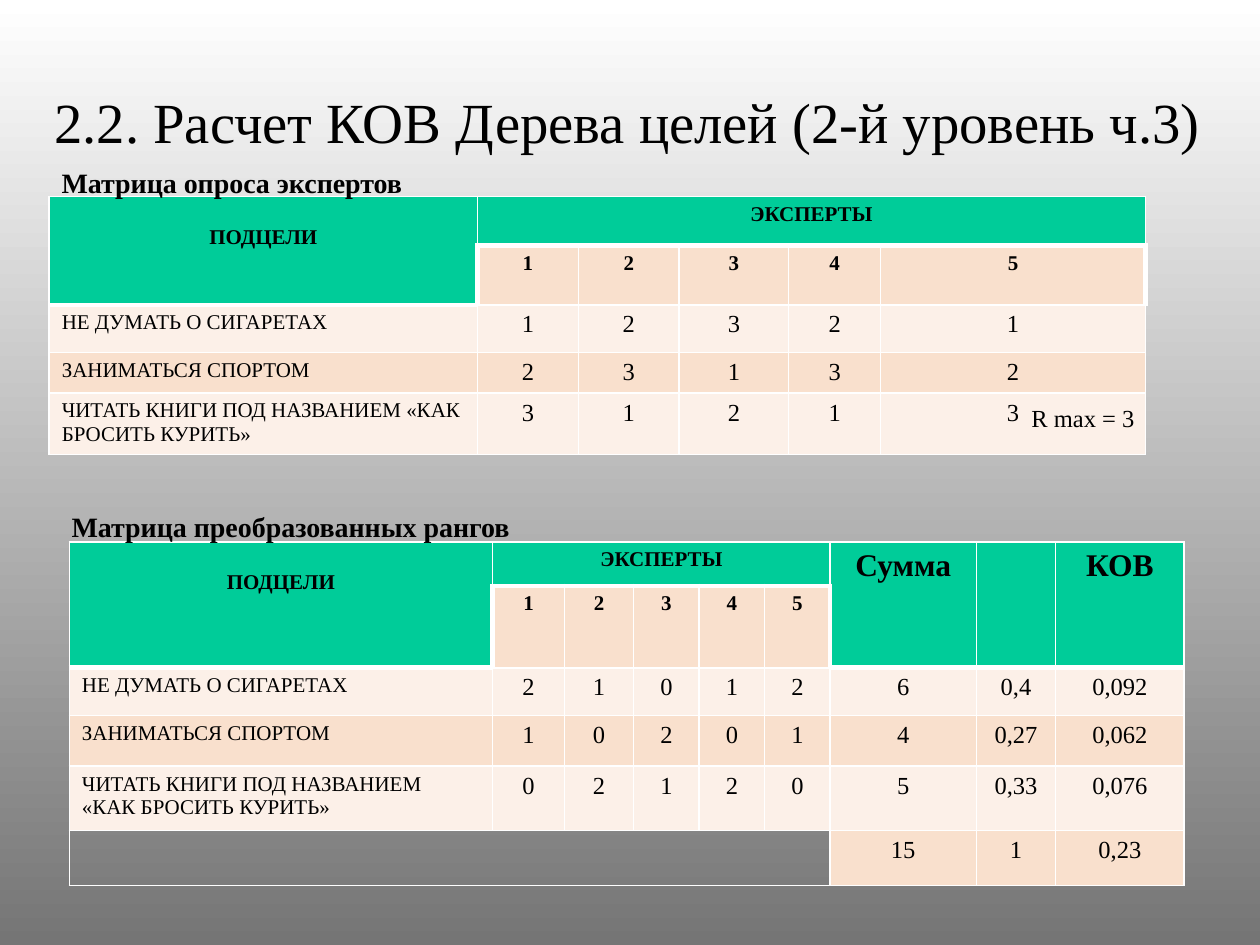
from dataclasses import dataclass

from lxml.etree import SubElement
from pptx import Presentation
from pptx.dml.color import RGBColor
from pptx.enum.text import MSO_ANCHOR as Anchor, PP_ALIGN as Align
from pptx.oxml.ns import qn
from pptx.util import Inches, Pt


@dataclass(frozen=True)
class Theme:
    font: str = "Times New Roman"
    ink: str = "000000"
    line: str = "FFFFFF"
    header: str = "00CC99"
    band_dark: str = "F9E0CD"
    band_light: str = "FCF0E8"
    background_top: str = "FFFFFF"
    background_bottom: str = "757575"
    title: float = 32.4
    caption: float = 16
    label: float = 12
    value: float = 14
    total: float = 18
    thin: float = 1
    thick: float = 3


THEME = Theme()
EXPERTS = 5
GOALS = [
    "НЕ ДУМАТЬ О СИГАРЕТАХ",
    "ЗАНИМАТЬСЯ СПОРТОМ",
    "ЧИТАТЬ КНИГИ ПОД НАЗВАНИЕМ «КАК БРОСИТЬ КУРИТЬ»",
]
SURVEY = ["1 2 3 2 1", "2 3 1 3 2", "3 1 2 1 3"]
RANKS = ["2 1 0 1 2 6 0,4 0,092", "1 0 2 0 1 4 0,27 0,062", "0 2 1 2 0 5 0,33 0,076"]
TOTALS = ["15", "1", "0,23"]


def write(text_frame, text, size, bold=False, align=Align.LEFT):
    text_frame.text = text
    paragraph = text_frame.paragraphs[0]
    paragraph.alignment = align
    for run in paragraph.runs:
        run.font.name = THEME.font
        run.font.size = Pt(size)
        run.font.bold = bold
        run.font.color.rgb = RGBColor.from_string(THEME.ink)


def add_background(slide):
    fill = slide.background.fill
    fill.gradient()
    fill.gradient_angle = 270
    colors = (THEME.background_top, THEME.background_bottom)
    for stop, position, color in zip(fill.gradient_stops, (0, 1), colors):
        stop.position = position
        stop.color.rgb = RGBColor.from_string(color)


def add_title(slide, box, text):
    title = slide.shapes.title
    title.left, title.top, title.width, title.height = map(Inches, box)
    title.text_frame.vertical_anchor = Anchor.MIDDLE
    write(title.text_frame, text, THEME.title)


def add_text(slide, box, text, size, bold=False, align=Align.LEFT):
    text_frame = slide.shapes.add_textbox(*map(Inches, box)).text_frame
    text_frame.word_wrap = True
    text_frame.vertical_anchor = Anchor.MIDDLE
    write(text_frame, text, size, bold, align)


def set_borders(cell, thick_sides):
    properties = cell._tc.get_or_add_tcPr()
    for side in "LRTB":
        width = THEME.thick if side in thick_sides else THEME.thin
        line = SubElement(properties, qn(f"a:ln{side}"), w=str(Pt(width)))
        fill = SubElement(line, qn("a:solidFill"))
        SubElement(fill, qn("a:srgbClr"), val=THEME.line)


def find_thick_sides(row, column):
    """Heavy lines part the header from the expert numbers and the data."""
    is_expert = 1 <= column <= EXPERTS
    sides = ""
    if row == 0:
        sides = "B"
    elif row == 1 and is_expert:
        sides = "T" + ("L" if column == 1 else "") + ("R" if column == EXPERTS else "")
    elif row == 1:
        sides = "B"
    elif row == 2 and not is_expert:
        sides = "T"
    return sides


def fill_header(table, extra_headings):
    headings = {0: "ПОДЦЕЛИ", 1: "ЭКСПЕРТЫ"}
    for column, heading in headings.items():
        write(table.cell(0, column).text_frame, heading, THEME.label, True, Align.CENTER)
    table.cell(0, 0).margin_top = Inches(0.23)
    table.cell(0, 1).merge(table.cell(0, EXPERTS))
    for column in range(1, EXPERTS + 1):
        write(table.cell(1, column).text_frame, str(column), THEME.label, True, Align.CENTER)
    for column, heading in enumerate(extra_headings, EXPERTS + 1):
        write(table.cell(0, column).text_frame, heading, THEME.total, True, Align.CENTER)
    for column in (0, *range(EXPERTS + 1, len(table.columns))):
        table.cell(0, column).merge(table.cell(1, column))


def fill_values(table, row, values, first_column=1):
    for column, value in enumerate(values, first_column):
        write(table.cell(row, column).text_frame, value, THEME.value, align=Align.CENTER)


def add_matrix(slide, left, top, widths, heights, data, extra_headings=(), totals=()):
    frame = slide.shapes.add_table(len(heights), len(widths), Inches(left), Inches(top),
                                   Inches(sum(widths)), Inches(sum(heights)))
    table = frame.table
    table.first_row = table.horz_banding = False
    for column, width in zip(table.columns, widths):
        column.width = Inches(width)
    for row, height in zip(table.rows, heights):
        row.height = Inches(height)

    fill_header(table, extra_headings)
    for row, (goal, values) in enumerate(zip(GOALS, data), 2):
        write(table.cell(row, 0).text_frame, goal, THEME.label)
        fill_values(table, row, values.split())
    if totals:
        last = len(heights) - 1
        fill_values(table, last, totals, EXPERTS + 1)
        table.cell(last, 0).merge(table.cell(last, EXPERTS))

    for row in range(len(heights)):
        for column in range(len(widths)):
            cell = table.cell(row, column)
            set_borders(cell, find_thick_sides(row, column))
            if not cell.text_frame.text:
                SubElement(cell.text_frame.paragraphs[0]._p, qn("a:endParaRPr"),
                           sz=str(THEME.label * 100))
            if row >= 2 + len(GOALS) and column <= EXPERTS:
                cell.fill.background()
                continue
            is_header = row == 0 or (row == 1 and not 1 <= column <= EXPERTS)
            band = THEME.band_dark if row % 2 else THEME.band_light
            cell.fill.solid()
            cell.fill.fore_color.rgb = RGBColor.from_string(THEME.header if is_header else band)


def main():
    presentation = Presentation()
    presentation.slide_width, presentation.slide_height = Inches(10), Inches(7.5)
    slide = presentation.slides.add_slide(presentation.slide_layouts[5])
    add_background(slide)
    add_title(slide, (0.33, 0.5, 9.5, 0.92), "2.2. Расчет КОВ Дерева целей (2-й уровень ч.3)")

    add_matrix(slide, 0.39, 1.56, [3.4, 0.8, 0.8, 0.87, 0.73, 2.1],
               [0.39, 0.47, 0.38, 0.32, 0.49], SURVEY)
    add_text(slide, (7.97, 3.12, 1.25, 0.39), "R max = 3", THEME.value, align=Align.CENTER)
    add_text(slide, (0.39, 1.25, 6.09, 0.39), "Матрица опроса экспертов", THEME.caption, True)

    add_matrix(slide, 0.55, 4.3, [3.36, 0.57, 0.55, 0.52, 0.52, 0.52, 1.16, 0.63, 1.02],
               [0.35, 0.65, 0.38, 0.4, 0.51, 0.44], RANKS, ["Сумма", "", "КОВ"], TOTALS)
    add_text(slide, (0.47, 3.98, 6.09, 0.39), "Матрица преобразованных рангов",
             THEME.caption, True)
    presentation.save("out.pptx")


if __name__ == "__main__":
    main()
